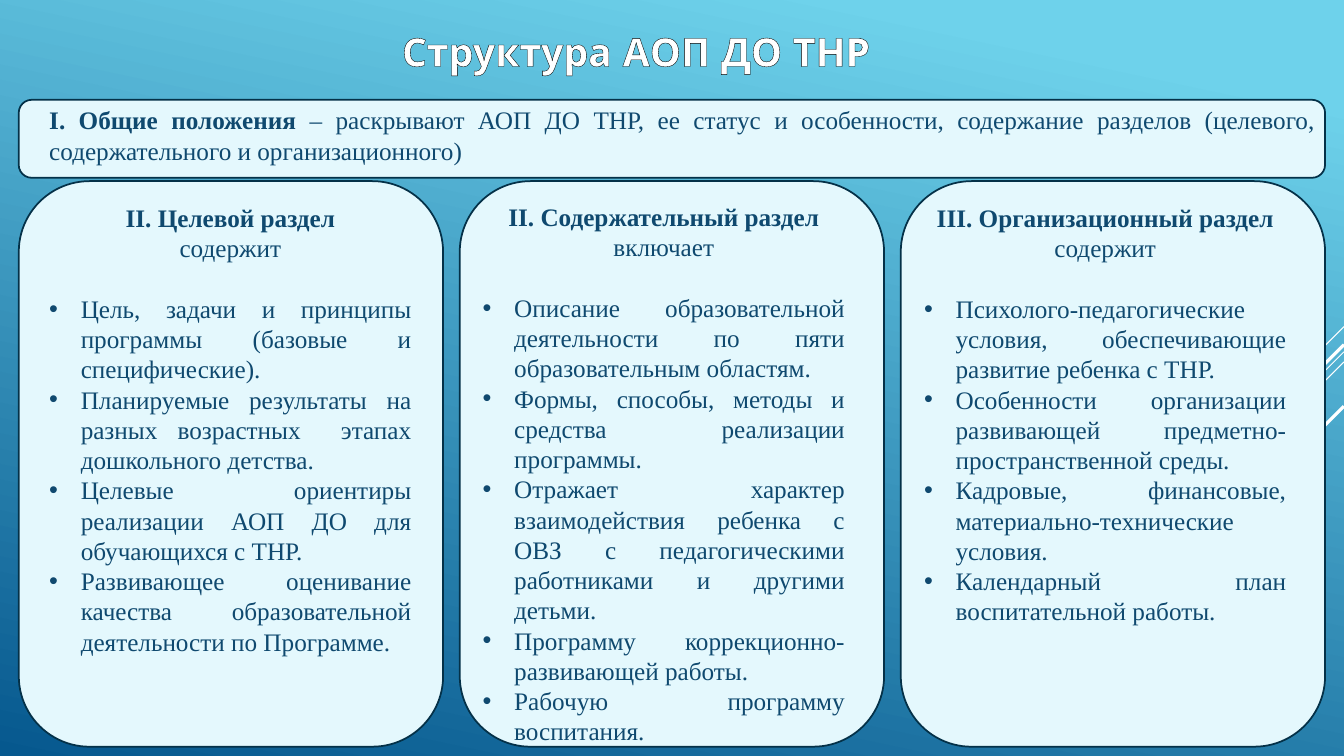
import pptx
import pptx.util
import pptx.dml.color
import pptx.enum.shapes
import pptx.enum.text
import pptx.oxml

Pt = pptx.util.Pt
ALIGN = pptx.enum.text.PP_ALIGN
ANCHOR = pptx.enum.text.MSO_ANCHOR
FONT = "Times New Roman"
COLORS = {"light": "6ED2EB", "deep": "06588E", "panel": "E4F8FD",
          "edge": "043148", "text": "0F496F", "white": "FFFFFF"}

TITLE = "Структура АОП ДО ТНР"
INTRO = ("I. Общие положения",
         " – раскрывают АОП ДО ТНР, ее статус и особенности, содержание разделов "
         "(целевого, содержательного и организационного)")
# heading, verb, text left, text top, points
PARTS = [
    ("II. Целевой раздел", "содержит", 28.1, 141.1, [
        "Цель, задачи и принципы программы (базовые и специфические).",
        "Планируемые результаты на разных возрастных  этапах дошкольного детства.",
        "Целевые ориентиры реализации АОП ДО для обучающихся с ТНР.",
        "Развивающее оценивание качества образовательной деятельности по Программе."]),
    ("II. Содержательный раздел", "включает", 337.7, 140.4, [
        "Описание образовательной деятельности по пяти образовательным областям.",
        "Формы, способы, методы и средства реализации программы.",
        "Отражает характер взаимодействия ребенка с ОВЗ с педагогическими "
        "работниками и другими детьми.",
        "Программу коррекционно-развивающей работы.",
        "Рабочую программу воспитания."]),
    ("III. Организационный раздел", "содержит", 653, 141.1, [
        "Психолого-педагогические условия, обеспечивающие развитие ребенка с ТНР.",
        "Особенности организации развивающей предметно-пространственной среды.",
        "Кадровые, финансовые, материально-технические условия.",
        "Календарный план воспитательной работы."]),
]
# top at the right edge, run to the lower left, line width
RAYS = [(233.3, 72, .75), (251.3, 234.7, .75), (258.5, 149, .75),
        (246.2, 137.5, 2.25), (290.2, 100.1, 2.25)]
WIDE, HIGH = 960, 540
LEFT, STEP, PANEL = 13.4, 315, 303.1
LINE = 21.6
INDENT = 22.5


def color(name):
    return pptx.dml.color.RGBColor.from_string(COLORS[name])


def xml(tag, attrs="", inner=""):
    return pptx.oxml.parse_xml(
        f'<a:{tag} xmlns:a="http://schemas.openxmlformats.org/drawingml/2006/main"'
        f' {attrs}>{inner}</a:{tag}>')


def add_panel(x, y, w, h):
    kind = pptx.enum.shapes.MSO_SHAPE.ROUNDED_RECTANGLE
    panel = slide.shapes.add_shape(kind, Pt(x), Pt(y), Pt(w), Pt(h))
    panel.shadow.inherit = False
    panel.fill.solid()
    panel.fill.fore_color.rgb = color("panel")
    panel.line.color.rgb = color("edge")
    panel.line.width = Pt(1.25)


def add_box(x, y, w, h):
    frame = slide.shapes.add_textbox(Pt(x), Pt(y), Pt(w), Pt(h)).text_frame
    frame.word_wrap = True
    return frame


def add_run(para, text, bold=False, size=18, face=FONT, ink="text"):
    run = para.add_run()
    run.text = text
    font = run.font
    font.name, font.size, font.bold = face, Pt(size), bold
    font.color.rgb = color(ink)
    return run


def set_para(para, align):
    para.alignment = align
    para.line_spacing = Pt(LINE)
    return para


def add_bullet(para):
    props = para._p.get_or_add_pPr()
    props.set("marL", str(Pt(INDENT)))
    props.set("indent", str(-Pt(INDENT)))
    props.append(xml("buFont", 'typeface="Arial"'))
    props.append(xml("buChar", 'char="•"'))


deck = pptx.Presentation()
deck.slide_width, deck.slide_height = Pt(WIDE), Pt(HIGH)
slide = deck.slides.add_slide(deck.slide_layouts[5])

back = slide.background.fill
back.gradient()
back.gradient_angle = 258
for stop, name, place in zip(back.gradient_stops, ("light", "deep"), (.1, 1)):
    stop.color.rgb = color(name)
    stop.position = place

for top, run, width in RAYS:
    ray = slide.shapes.add_connector(
        pptx.enum.shapes.MSO_CONNECTOR.STRAIGHT,
        Pt(WIDE), Pt(top), Pt(WIDE - run), Pt(top + run))
    ray.line.color.rgb = color("white")
    ray.line.width = Pt(width)
    ray._element.spPr.append(xml("effectLst"))

title = slide.shapes.title
title.left, title.top, title.width, title.height = Pt(278.6), Pt(15.8), Pt(351.4), Pt(41)
title.text_frame.word_wrap = False
title.text_frame.vertical_anchor = ANCHOR.MIDDLE
para = title.text_frame.paragraphs[0]
para.alignment = ALIGN.CENTER
run = add_run(para, TITLE, True, 28, "Quicksand", "white")
run._r.get_or_add_rPr().insert(0, xml(
    "ln", f'w="{Pt(.75)}"', '<a:solidFill><a:srgbClr val="000000"/></a:solidFill>'))

add_panel(LEFT, 71.3, 2 * STEP + PANEL, 55.7)
para = set_para(add_box(28.1, 71.3, 918.7, 51.1).paragraphs[0], ALIGN.JUSTIFY)
add_run(para, INTRO[0], True)
add_run(para, INTRO[1])

for i, (head, verb, x, y, points) in enumerate(PARTS):
    add_panel(LEFT + i * STEP, 129.4, PANEL, 404)
    frame = add_box(x, y, 272.9, 356)
    add_run(set_para(frame.paragraphs[0], ALIGN.CENTER), head, True)
    para = set_para(frame.add_paragraph(), ALIGN.CENTER)
    para.space_after = Pt(LINE)
    add_run(para, verb)
    for point in points:
        para = set_para(frame.add_paragraph(), ALIGN.JUSTIFY)
        add_bullet(para)
        add_run(para, point)

deck.save("out.pptx")
